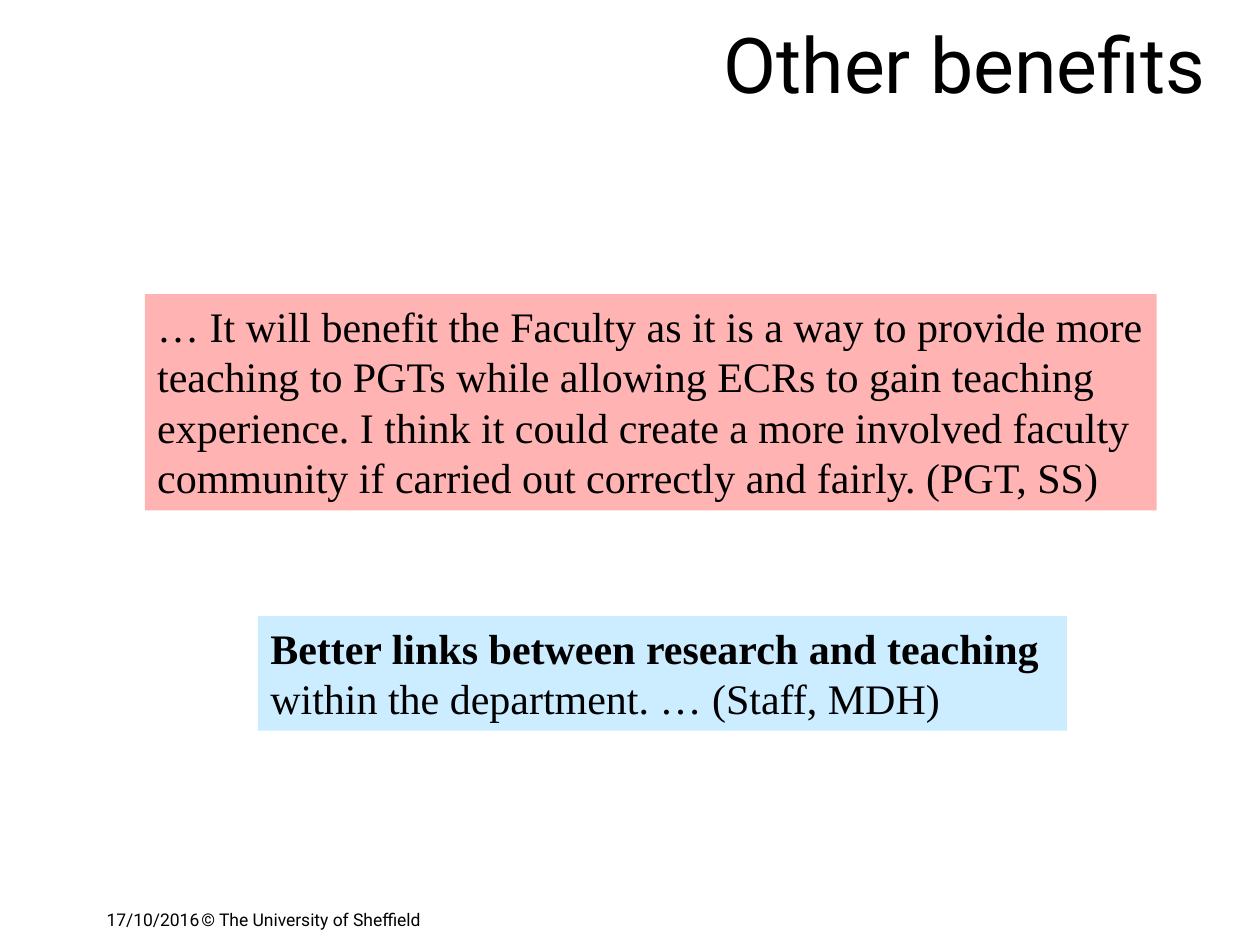
from pptx import Presentation
from pptx.dml.color import RGBColor
from pptx.enum.shapes import MSO_SHAPE as Shape
from pptx.enum.text import MSO_ANCHOR as Anchor, PP_ALIGN as Align
from pptx.util import Cm, Pt

BLACK = RGBColor(0x00, 0x00, 0x00)
PINK = RGBColor(0xFF, 0xB3, 0xB3)
PALE_BLUE = RGBColor(0xCC, 0xEC, 0xFF)
SANS, SERIF = "Roboto", "Times New Roman"

# Content: positions are left, top, width, height in centimetres
TITLE = "Other benefits"
TITLE_AREA = (1.7, 0.53, 22.86, 2.11)
FOOTERS = [
    ("17/10/2016", (1.9, 18.21, 2.54, 0.84)),
    ("© The University of Sheffield", (3.81, 18.21, 14.4, 0.84)),
]
# Each quote: fill, area, spans of (text, bold)
QUOTES = [
    (PINK, (2.92, 5.93, 20.4, 4.36), [
        ("… It will benefit the Faculty as it is a way to provide more teaching "
         "to PGTs while allowing ECRs to gain teaching experience. I think it "
         "could create a more involved faculty community if carried out "
         "correctly and fairly. (PGT, SS)", False),
    ]),
    (PALE_BLUE, (5.2, 12.42, 16.31, 2.31), [
        ("Better links between research and teaching ", True),
        ("within the department. … (Staff, MDH)", False),
    ]),
]


def area(values):
    return [Cm(value) for value in values]


def write(box, spans, font_name, size, align=Align.LEFT):
    frame = box.text_frame
    frame.word_wrap = True
    frame.vertical_anchor = Anchor.TOP
    para = frame.paragraphs[0]
    para.alignment = align
    for text, bold in spans:
        span = para.add_run()
        span.text = text
        span.font.name = font_name
        span.font.size = Pt(size)
        span.font.bold = bold
        span.font.color.rgb = BLACK
    return para


deck = Presentation()
deck.slide_width, deck.slide_height = Cm(25.4), Cm(19.05)
page = deck.slides.add_slide(deck.slide_layouts[5])

# Title
title = page.shapes.title
title.left, title.top, title.width, title.height = area(TITLE_AREA)
write(title, [(TITLE, False)], SANS, 44, Align.RIGHT).line_spacing = 0.83

# Date and copyright line
for text, place in FOOTERS:
    write(page.shapes.add_textbox(*area(place)), [(text, False)], SANS, 10)

# Quotes
for fill, place, spans in QUOTES:
    quote = page.shapes.add_shape(Shape.RECTANGLE, *area(place))
    quote.shadow.inherit = False
    quote.fill.solid()
    quote.fill.fore_color.rgb = fill
    quote.line.fill.background()
    write(quote, spans, SERIF, 24)

deck.save("out.pptx")
